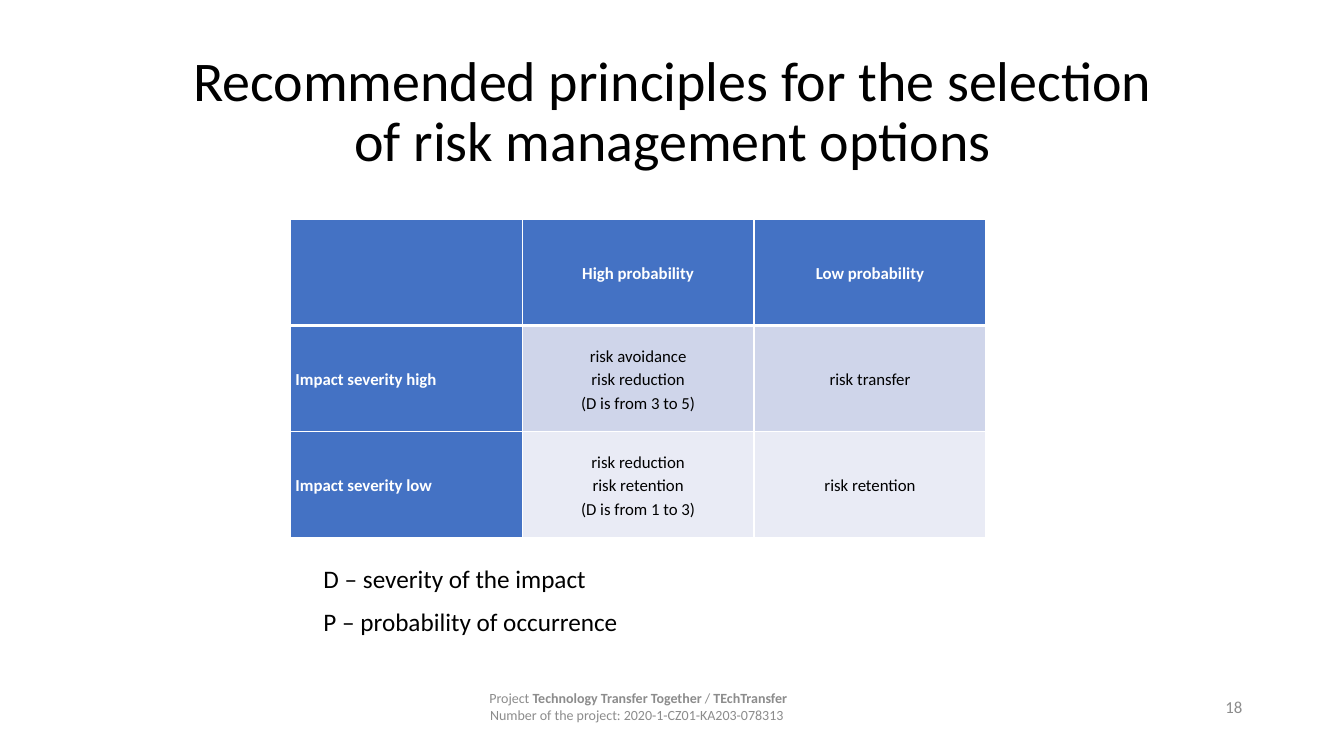
from lxml.etree import SubElement
from pptx import Presentation
from pptx.dml.color import RGBColor
from pptx.enum.text import MSO_ANCHOR as Anchor, PP_ALIGN as Align
from pptx.oxml.ns import qn
from pptx.util import Inches, Pt

BLACK = RGBColor(0x00, 0x00, 0x00)
WHITE = RGBColor(0xFF, 0xFF, 0xFF)
GREY = RGBColor(0x8C, 0x8C, 0x8C)
BLUE = RGBColor(0x44, 0x72, 0xC4)
ROW_FILLS = [BLUE, RGBColor(0xCF, 0xD5, 0xEA), RGBColor(0xE9, 0xEB, 0xF5)]
FONT = "Calibri"

# A paragraph is a list of (text, bold) runs.
TITLE = [[("Recommended principles for the selection", False), ("\n", False),
          ("of risk management options", False)]]
PAGE = [[("18", False)]]
FOOTER = [
    [("Project ", False), ("Technology Transfer Together", True),
     (" / ", False), ("TEchTransfer", True)],
    [("Number of the project: 2020-1-CZ01-KA203-078313 ", False)],
]
LEGEND = [[("D – severity of the impact", False)],
          [("P – probability of occurrence", False)]]
OPTIONS = [
    [[], ["High probability"], ["Low probability"]],
    [["Impact severity high"],
     ["risk avoidance", "risk reduction", "(D is from 3 to 5)"],
     ["risk transfer"]],
    [["Impact severity low"],
     ["risk reduction", "risk retention", "(D is from 1 to 3)"],
     ["risk retention"]],
]
TABLE_LEFT, TABLE_TOP, COL_WIDTH, ROW_HEIGHT = 2.88, 2.18, 2.3, 1.05


def write(tf, paragraphs, size, color, align, spacing=1.0, after=0, indent=0):
    for i, runs in enumerate(paragraphs):
        p = tf.paragraphs[0] if i == 0 else tf.add_paragraph()
        p.alignment, p.line_spacing = align, spacing
        p.space_before, p.space_after = Pt(0), Pt(after)
        if indent:
            pPr = p._p.get_or_add_pPr()
            pPr.set("marL", str(Inches(indent)))
            pPr.set("indent", "0")
        for text, bold in runs:
            if text == "\n":
                p.add_line_break()
                continue
            r = p.add_run()
            r.text = text
            r.font.name, r.font.size, r.font.bold = FONT, Pt(size), bold
            r.font.color.rgb = color


def add_text(slide, box, paragraphs, size, color, align,
             anchor=Anchor.MIDDLE, **layout):
    tf = slide.shapes.add_textbox(*map(Inches, box)).text_frame
    tf.word_wrap, tf.vertical_anchor = True, anchor
    write(tf, paragraphs, size, color, align, **layout)


def set_borders(cell, bottom):
    """Draw white cell edges, 1 pt wide except for the bottom one."""
    tcPr = cell._tc.get_or_add_tcPr()
    widths = {"lnL": 1, "lnR": 1, "lnT": 1, "lnB": bottom}
    for edge, width in widths.items():
        ln = SubElement(tcPr, qn(f"a:{edge}"), w=str(Pt(width)))
        fill = SubElement(ln, qn("a:solidFill"))
        SubElement(fill, qn("a:srgbClr"), val=str(WHITE))


def add_options_table(slide):
    rows, cols = len(OPTIONS), len(OPTIONS[0])
    table = slide.shapes.add_table(
        rows, cols, Inches(TABLE_LEFT), Inches(TABLE_TOP),
        Inches(cols * COL_WIDTH), Inches(rows * ROW_HEIGHT)).table
    table.first_col = True
    for i, row in enumerate(OPTIONS):
        for j, lines in enumerate(row):
            header = i == 0 or j == 0
            cell = table.cell(i, j)
            cell.margin_left = cell.margin_right = Inches(0.05)
            cell.margin_top = cell.margin_bottom = 0
            cell.vertical_anchor = Anchor.MIDDLE
            set_borders(cell, bottom=3 if i == 0 else 1)
            cell.fill.solid()
            cell.fill.fore_color.rgb = BLUE if header else ROW_FILLS[i]
            write(cell.text_frame, [[(line, header)] for line in lines], 12,
                  WHITE if header else BLACK,
                  Align.LEFT if j == 0 else Align.CENTER, spacing=1.15)


def main():
    prs = Presentation()
    prs.slide_width, prs.slide_height = Inches(13.33), Inches(7.5)
    slide = prs.slides.add_slide(prs.slide_layouts[6])
    add_text(slide, (0.92, 0.4, 11.5, 1.45), TITLE, 40, BLACK, Align.CENTER,
             spacing=0.9)
    add_text(slide, (11.53, 6.81, 0.89, 0.4), PAGE, 12, GREY, Align.RIGHT)
    add_text(slide, (4.42, 6.81, 3.82, 0.39), FOOTER, 10, GREY, Align.CENTER)
    add_options_table(slide)
    add_text(slide, (2.62, 5.49, 6.67, 0.88), LEGEND, 18, BLACK, Align.JUSTIFY,
             anchor=Anchor.TOP, spacing=1.15, after=6, indent=0.49)
    prs.save("out.pptx")


if __name__ == "__main__":
    main()
